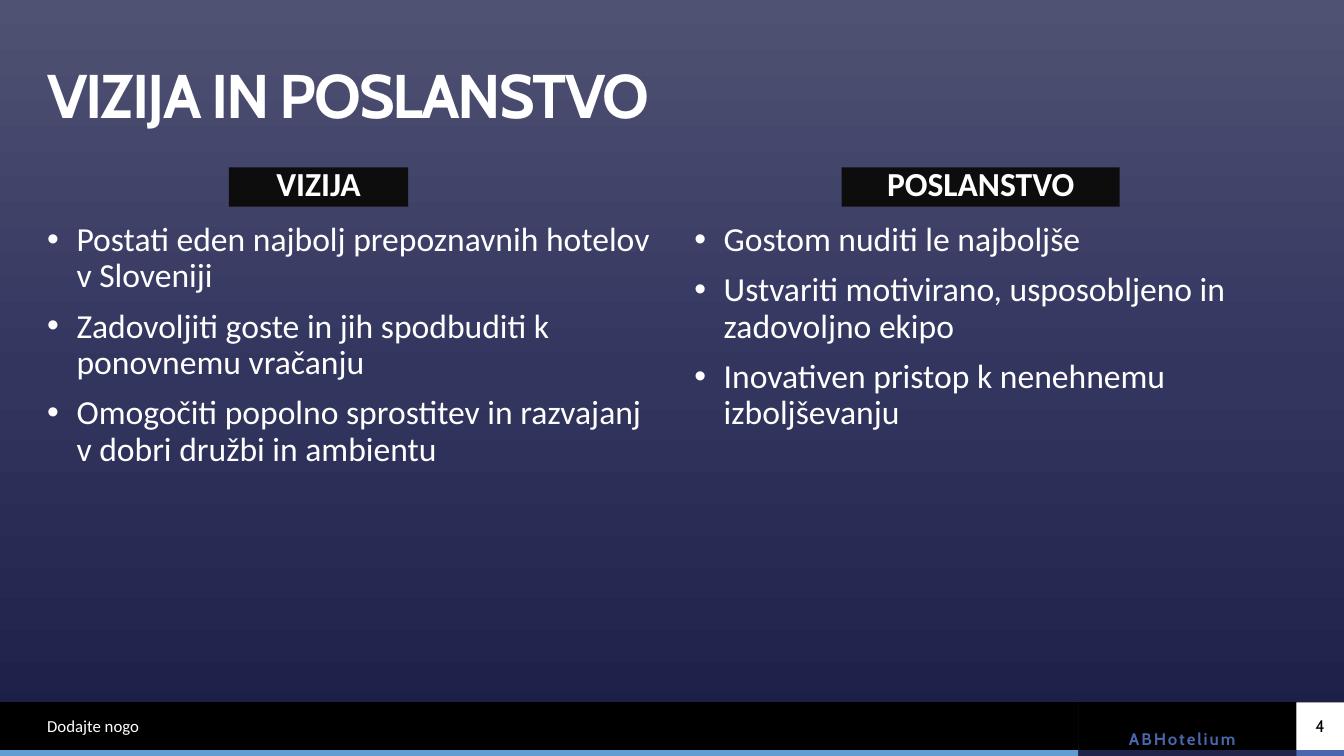
"""Build the vision and mission slide of a hotel presentation."""
from dataclasses import dataclass, field
from typing import Any, Optional

from lxml import etree
from pptx import Presentation
from pptx.dml.color import RGBColor
from pptx.enum.shapes import MSO_CONNECTOR, MSO_SHAPE
from pptx.enum.text import MSO_ANCHOR, PP_ALIGN
from pptx.oxml.ns import qn
from pptx.util import Cm, Pt

RECT = MSO_SHAPE.RECTANGLE
STRAIGHT = MSO_CONNECTOR.STRAIGHT
TOP, MIDDLE = MSO_ANCHOR.TOP, MSO_ANCHOR.MIDDLE
LEFT, CENTER, RIGHT = PP_ALIGN.LEFT, PP_ALIGN.CENTER, PP_ALIGN.RIGHT

WHITE = RGBColor(0xFF, 0xFF, 0xFF)
BLACK = RGBColor(0x00, 0x00, 0x00)
CHARCOAL = RGBColor(0x0D, 0x0D, 0x0D)
NAVY = RGBColor(0x20, 0x24, 0x4A)
BLUE = RGBColor(0x4A, 0x66, 0xAC)
SKY = RGBColor(0x62, 0x9D, 0xD1)
BACKGROUND = (
    (0.0, RGBColor(0x50, 0x52, 0x73)),
    (0.5, RGBColor(0x32, 0x35, 0x5E)),
    (1.0, RGBColor(0x1A, 0x1E, 0x47)),
)

WIDTH, HEIGHT = 33.87, 19.05
MARGIN = 1.19
BAR_TOP, BAR_HEIGHT = 17.7, 1.2
STRIP_TOP, STRIP_HEIGHT = 18.9, 0.15
BRAND_LEFT, NUMBER_LEFT = 27.18, 32.67
HEADING_TOP, HEADING_HEIGHT = 4.22, 0.99
LIST_TOP, LIST_WIDTH, LIST_HEIGHT = 5.61, 15.19, 11.58
INDENT = 0.74

BODY_FONT = {"name": "Calibri", "size": Pt(24)}
BODY_PARAGRAPH = {"line_spacing": 0.9, "space_before": Pt(10)}


@dataclass
class Box:
    left: float
    top: float
    width: float
    height: float
    fill: Optional[RGBColor] = None


@dataclass
class Text:
    lines: tuple[str, ...]
    color: RGBColor = WHITE
    font: dict[str, Any] = field(default_factory=dict)
    paragraph: dict[str, Any] = field(default_factory=dict)
    anchor: MSO_ANCHOR = TOP
    spacing: int = 0
    bullets: bool = False


@dataclass
class Column:
    left: float
    heading: str
    heading_left: float
    heading_width: float
    items: tuple[str, ...]


COLUMNS = (
    Column(MARGIN, "VIZIJA", 5.77, 4.52, (
        "Postati eden najbolj prepoznavnih hotelov v Sloveniji",
        "Zadovoljiti goste in jih spodbuditi k ponovnemu vračanju",
        "Omogočiti popolno sprostitev in razvajanj v dobri družbi in ambientu",
    )),
    Column(17.5, "POSLANSTVO", 21.21, 7.01, (
        "Gostom nuditi le najboljše",
        "Ustvariti motivirano, usposobljeno in zadovoljno ekipo",
        "Inovativen pristop k nenehnemu izboljševanju",
    )),
)

FOOTER_BLOCKS = (
    Box(0, BAR_TOP, BRAND_LEFT, BAR_HEIGHT, BLACK),
    Box(BRAND_LEFT, BAR_TOP, NUMBER_LEFT - BRAND_LEFT, BAR_HEIGHT, BLACK),
    Box(0, STRIP_TOP, BRAND_LEFT, STRIP_HEIGHT, SKY),
    Box(BRAND_LEFT, STRIP_TOP, NUMBER_LEFT - BRAND_LEFT, STRIP_HEIGHT, NAVY),
    Box(NUMBER_LEFT, STRIP_TOP, WIDTH - NUMBER_LEFT, STRIP_HEIGHT, BLUE),
)


def apply(target: Any, values: dict[str, Any]) -> None:
    """Set each attribute named in the format values."""
    for name, value in values.items():
        setattr(target, name, value)


def paint_background(s: Any) -> None:
    """Fill the background with a vertical three-stop gradient."""
    fill = s.background.fill
    fill.gradient()
    fill.gradient_angle = 270
    stops = s.background._cSld.find(".//" + qn("a:gsLst"))
    etree.SubElement(stops, qn("a:gs"), pos="0")
    for stop, (position, color) in zip(fill.gradient_stops, BACKGROUND):
        stop.position = position
        stop.color.rgb = color


def add_bullet(p: Any) -> None:
    """Give a paragraph a hanging round bullet."""
    pPr = p._p.get_or_add_pPr()
    pPr.set("marL", str(Cm(INDENT)))
    pPr.set("indent", str(-Cm(INDENT)))
    etree.SubElement(pPr, qn("a:buFont"), typeface="Arial")
    etree.SubElement(pPr, qn("a:buChar"), char="•")


def add_box(s: Any, box: Box, text: Optional[Text] = None) -> None:
    """Draw a filled rectangle or a plain text box, with its text."""
    place = [Cm(v) for v in (box.left, box.top, box.width, box.height)]
    if box.fill is None:
        sp = s.shapes.add_textbox(*place)
    else:
        sp = s.shapes.add_shape(RECT, *place)
        sp.shadow.inherit = False
        sp.fill.solid()
        sp.fill.fore_color.rgb = box.fill
        sp.line.fill.background()
    if text is None:
        return
    tf = sp.text_frame
    apply(tf, {"word_wrap": True, "vertical_anchor": text.anchor, "margin_left": 0,
               "margin_right": 0, "margin_top": 0, "margin_bottom": 0})
    for i, line in enumerate(text.lines):
        p = tf.add_paragraph() if i else tf.paragraphs[0]
        apply(p, {"alignment": LEFT, **text.paragraph})
        if text.bullets:
            add_bullet(p)
        r = p.add_run()
        r.text = line
        apply(r.font, text.font)
        r.font.color.rgb = text.color
        if text.spacing:
            r._r.get_or_add_rPr().set("spc", str(text.spacing))


def add_footer(s: Any) -> None:
    """Draw the footer bar, its labels and the slide number."""
    for block in FOOTER_BLOCKS:
        add_box(s, block)
    line = s.shapes.add_connector(STRAIGHT, Cm(WIDTH), Cm(BAR_TOP), 0, Cm(BAR_TOP))
    line.line.color.rgb = BLACK
    line.line.width = Pt(0.5)
    etree.SubElement(line._element.spPr, qn("a:effectLst"))
    add_box(s, Box(28.02, 18.53, 3.12, 0.36), Text(
        ("ABHotelium",), BLUE, {"name": "Cabin", "size": Pt(12), "bold": True},
        {"alignment": RIGHT, "line_spacing": Pt(10)}, spacing=140))
    add_box(s, Box(MARGIN, 17.88, 15.72, 0.81), Text(
        ("Dodajte nogo",), font={"name": "Calibri", "size": Pt(12)}, anchor=MIDDLE))
    add_box(s, Box(NUMBER_LEFT, BAR_TOP, WIDTH - NUMBER_LEFT, BAR_HEIGHT, WHITE), Text(
        ("4",), BLACK, {"name": "Cabin", "size": Pt(12)}, {"alignment": CENTER}, MIDDLE))


def add_column(s: Any, column: Column) -> None:
    """Draw a heading plate and the bulleted list below it."""
    plate = Box(column.heading_left, HEADING_TOP, column.heading_width, HEADING_HEIGHT, CHARCOAL)
    add_box(s, plate, Text((column.heading,), font={**BODY_FONT, "bold": True},
                           paragraph={**BODY_PARAGRAPH, "alignment": CENTER}))
    add_box(s, Box(column.left, LIST_TOP, LIST_WIDTH, LIST_HEIGHT), Text(
        column.items, font=BODY_FONT, paragraph=BODY_PARAGRAPH, bullets=True))


def main() -> None:
    """Build and save the slide."""
    prs = Presentation()
    prs.slide_width, prs.slide_height = Cm(WIDTH), Cm(HEIGHT)
    s = prs.slides.add_slide(prs.slide_layouts[6])
    paint_background(s)
    add_footer(s)
    add_box(s, Box(MARGIN, 1.19, 31.49, 2.59), Text(
        ("VIZIJA IN POSLANSTVO",), font={"name": "Cabin", "size": Pt(44), "bold": True},
        paragraph={"line_spacing": 0.9}, anchor=MIDDLE, spacing=-150))
    for column in COLUMNS:
        add_column(s, column)
    prs.save("out.pptx")


if __name__ == "__main__":
    main()
